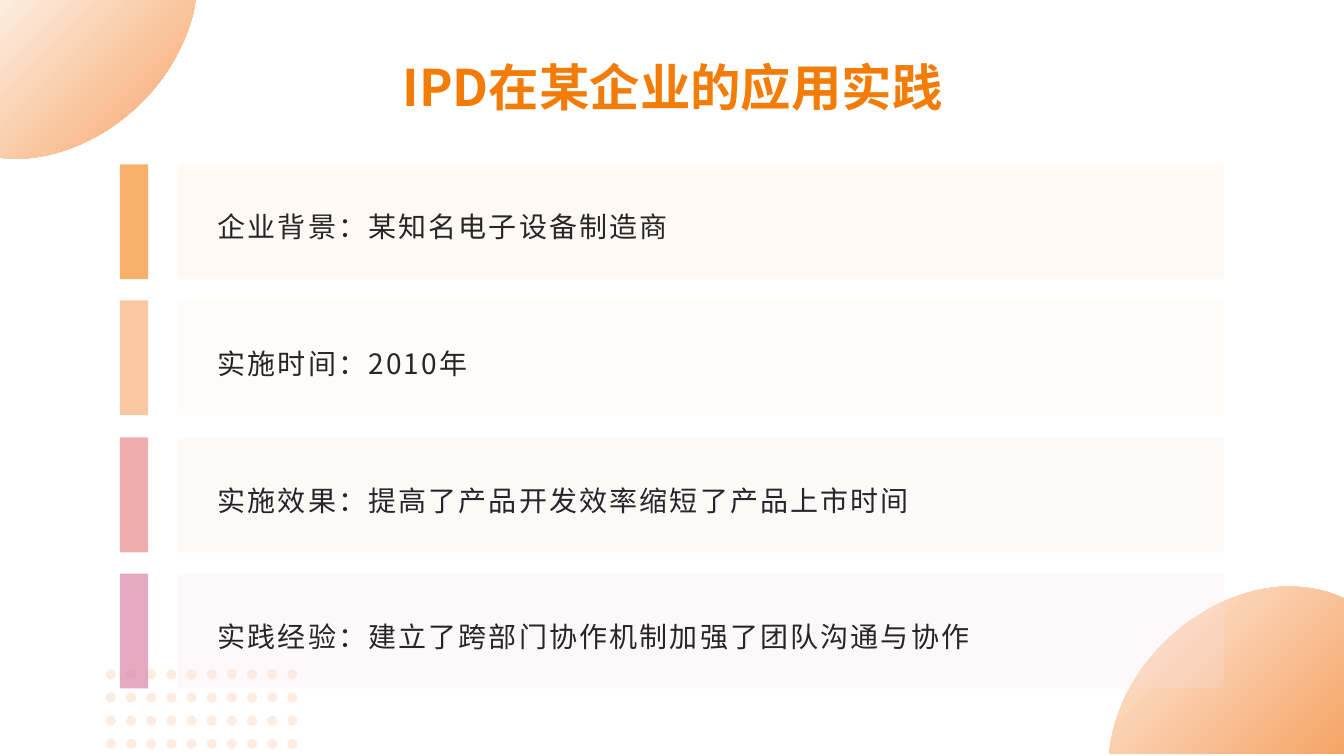
import dataclasses

import pptx
import pptx.dml.color
import pptx.enum.shapes
import pptx.enum.text
import pptx.oxml.ns
import pptx.util
from lxml import etree

PX = 9144  # EMU in one px, 100 px to the inch
STEPS = 24
SHAPES = pptx.enum.shapes.MSO_SHAPE
ALIGN = pptx.enum.text.PP_ALIGN


@dataclasses.dataclass(frozen=True)
class Theme:
    font: str = "Noto Sans CJK SC"
    title: str = "F37C07"
    ink: str = "262626"
    pale: str = "FDEDE0"
    deep: str = "F6A466"
    head: int = 36
    body: int = 20


THEME = Theme()

# Each step is a line (x, y) or a curve (two handles and an end).
TOP = [(0, 0), (194, 0), (192, 12), (184, 44, 166, 77, 138, 104),
       (98, 142, 48, 161, 4, 157), (0, 156)]
BOTTOM = [(1278, 582), (1296, 582, 1313, 585, 1329, 592), (1333, 594),
          (1333, 748), (1100, 748), (1101, 741),
          (1106, 704, 1125, 666, 1157, 635), (1193, 601, 1238, 582, 1278, 582)]

# Text, bar colour, panel colour
ROWS = [
    ("企业背景：某知名电子设备制造商", "F37C07", "FEE5CC"),
    ("实施时间：2010年", "F6A466", "FDEDE0"),
    ("实施效果：提高了产品开发效率缩短了产品上市时间", "E47879", "FAE4E4"),
    ("实践经验：建立了跨部门协作机制加强了团队沟通与协作", "D27199", "F6E3EB"),
]


def rgb(code):
    return pptx.dml.color.RGBColor.from_string(code)


def add_sub(node, tag, **attrs):
    return etree.SubElement(node, pptx.oxml.ns.qn(tag), **attrs)


def add_form(slide, kind, box, color, alpha=100):
    """Add a plain preset shape; alpha is its opacity in percent."""
    form = slide.shapes.add_shape(kind, *(n * PX for n in box))
    form.shadow.inherit = False
    form.line.fill.background()
    form.fill.solid()
    form.fill.fore_color.rgb = rgb(color)
    if alpha < 100:
        tone = form.fill._xPr.find(".//" + pptx.oxml.ns.qn("a:srgbClr"))
        add_sub(tone, "a:alpha", val=str(alpha * 1000))


def trace(steps):
    """Turn lines and cubic curves into a list of points."""
    points = [steps[0]]
    for step in steps[1:]:
        if len(step) == 2:
            points.append(step)
            continue
        start, one, two, end = points[-1], step[:2], step[2:4], step[4:]
        for i in range(1, STEPS + 1):
            t = i / STEPS
            u = 1 - t
            points.append(tuple(
                u**3 * a + 3 * u * u * t * b + 3 * u * t * t * c + t**3 * d
                for a, b, c, d in zip(start, one, two, end)))
    return points


def add_blob(slide, steps):
    points = [(x * PX, y * PX) for x, y in trace(steps)]
    pen = slide.shapes.build_freeform(*points[0], scale=1)
    pen.add_line_segments(points[1:], close=True)
    blob = pen.convert_to_shape()
    blob.shadow.inherit = False
    blob.line.fill.background()
    blob.fill.gradient()
    blob.fill.gradient_angle = 315
    for stop, color in zip(blob.fill.gradient_stops, (THEME.pale, THEME.deep)):
        stop.color.rgb = rgb(color)


def add_text(slide, text, box, size, color, bold=False, align=ALIGN.LEFT,
             lead=1.0, space=0):
    """Add one line of text; space is the letter spacing in 1/100 pt."""
    frame = slide.shapes.add_textbox(*(n * PX for n in box)).text_frame
    frame.word_wrap = True
    frame.vertical_anchor = pptx.enum.text.MSO_ANCHOR.MIDDLE
    para = frame.paragraphs[0]
    para.alignment = align
    para.line_spacing = lead
    run = para.add_run()
    run.text = text
    font = run.font
    font.size = pptx.util.Pt(size)
    font.bold = bold
    font.color.rgb = rgb(color)
    font.name = THEME.font
    props = run._r.get_or_add_rPr()
    props.set("lang", "zh-CN")
    if space:
        props.set("spc", str(space))
    add_sub(props, "a:ea", typeface=THEME.font)


def add_dots(slide):
    for row in range(4):
        for col in range(10):
            box = (105 + 20 * col, 664 + 23 * row, 10, 10)
            add_form(slide, SHAPES.OVAL, box, THEME.pale)


def add_row(slide, top, text, bar, panel):
    add_form(slide, SHAPES.RECTANGLE, (176, top, 1038, 114), panel, alpha=20)
    add_form(slide, SHAPES.RECTANGLE, (119, top, 28, 114), bar, alpha=60)
    add_text(slide, text, (206, top + 10, 993, 94), THEME.body, THEME.ink,
             lead=1.3, space=150)


def main():
    deck = pptx.Presentation()
    deck.slide_width = 1333 * PX
    deck.slide_height = 750 * PX
    slide = deck.slides.add_slide(deck.slide_layouts[6])
    add_blob(slide, TOP)
    add_blob(slide, BOTTOM)
    add_dots(slide)
    add_text(slide, "IPD在某企业的应用实践", (67, 50, 1200, 71), THEME.head,
             THEME.title, bold=True, align=ALIGN.CENTER)
    for i, row in enumerate(ROWS):
        add_row(slide, round(163 + 135.4 * i), *row)
    deck.save("out.pptx")


if __name__ == "__main__":
    main()
